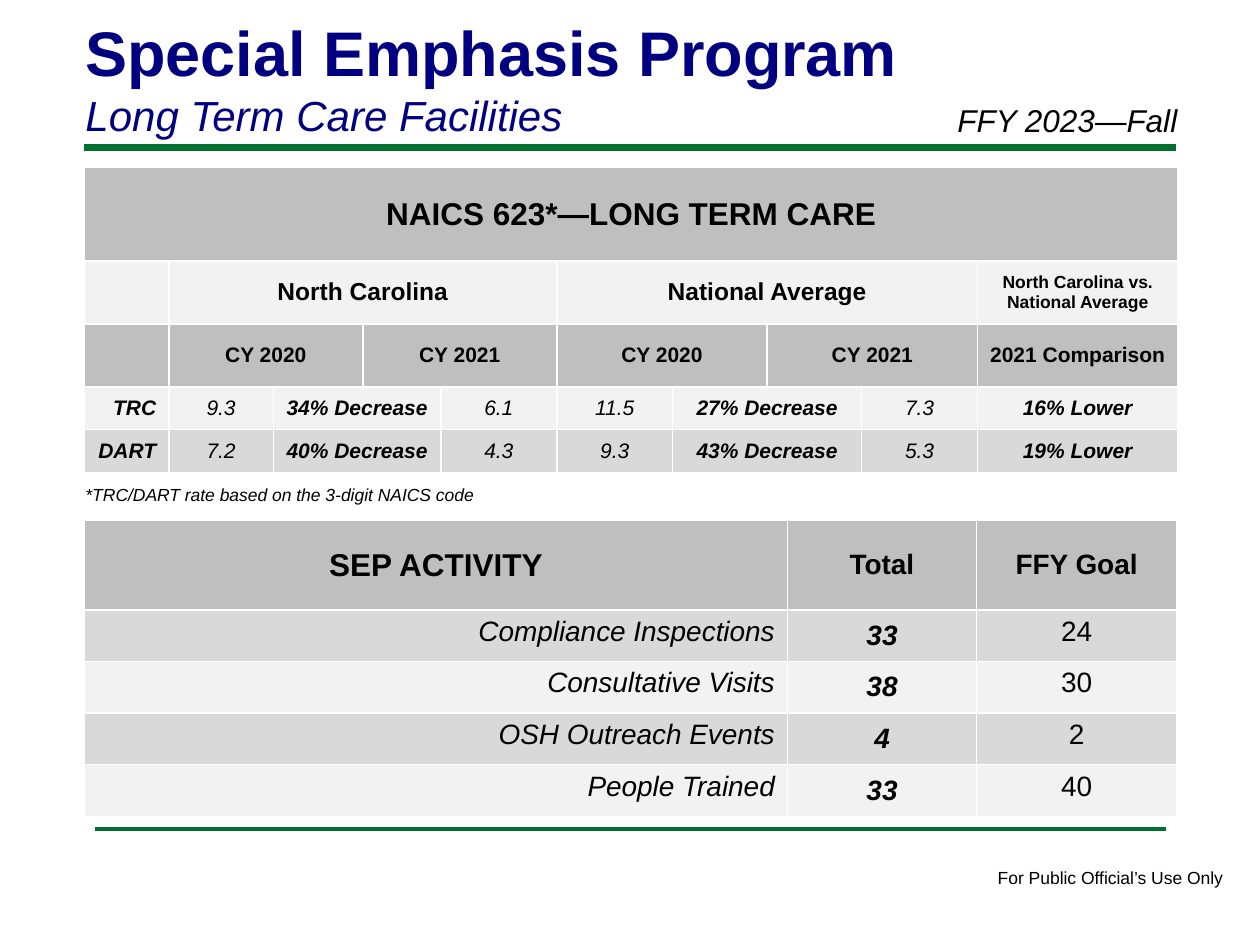
import pptx
import pptx.util
import pptx.dml.color
import pptx.enum.shapes
import pptx.enum.text
import pptx.oxml.ns
from lxml import etree

Inches = pptx.util.Inches
RGBColor = pptx.dml.color.RGBColor
ALIGN = pptx.enum.text.PP_ALIGN
ANCHOR = pptx.enum.text.MSO_ANCHOR

NAVY = RGBColor(0x00, 0x00, 0x80)
GREEN = RGBColor(0x00, 0x70, 0x30)
BLACK = RGBColor(0x00, 0x00, 0x00)
HEADER_GREY = RGBColor(0xBF, 0xBF, 0xBF)
MID_GREY = RGBColor(0xD9, 0xD9, 0xD9)
LIGHT_GREY = RGBColor(0xF2, 0xF2, 0xF2)


def add_run(para, text, size, bold=False, italic=False, color=BLACK):
    span = para.add_run()
    span.text = text
    span.font.name = "Arial"
    span.font.size = pptx.util.Pt(size)
    span.font.bold = bold
    span.font.italic = italic
    span.font.color.rgb = color


def add_table(slide, top, widths, heights, has_header):
    """Add an unbanded table at the left margin with the given grid."""
    frame = slide.shapes.add_table(
        len(heights), len(widths), Inches(0.67), Inches(top),
        Inches(sum(widths)), Inches(sum(heights)))
    table = frame.table
    table.first_row = has_header
    table.horz_banding = False
    for column, width in zip(table.columns, widths):
        column.width = Inches(width)
    for row, height in zip(table.rows, heights):
        row.height = Inches(height)
    return table


deck = pptx.Presentation()
deck.slide_width = Inches(10)
deck.slide_height = Inches(7.5)
page = deck.slides.add_slide(deck.slide_layouts[6])

# Rules under the title and above the footer
for left, right, y, weight in [(0.67, 9.33, 1.17, 4), (0.75, 9.25, 6.58, 2)]:
    rule = page.shapes.add_connector(
        pptx.enum.shapes.MSO_CONNECTOR.STRAIGHT,
        Inches(left), Inches(y), Inches(right), Inches(y))
    rule.line.color.rgb = GREEN
    rule.line.width = pptx.util.Pt(weight)
    etree.SubElement(rule._element.spPr, pptx.oxml.ns.qn("a:effectLst"))

# Text boxes: place, wrap, and one (text, size, bold, italic, colour) per line
text_boxes = [
    ((0.58, 0.06, 8.25, 1.11), True, [
        ("Special Emphasis Program", 36, True, False, NAVY),
        ("Long Term Care Facilities", 24, False, True, NAVY)]),
    ((7.5, 0.75, 2.5, 0.4), True, [("FFY 2023—Fall", 18, False, True, BLACK)]),
    ((0.58, 3.79, 3.38, 0.27), False, [
        ("*TRC/DART rate based on the 3-digit NAICS code", 10, False, True, BLACK)]),
    ((7.82, 6.83, 2.01, 0.27), False, [
        ("For Public Official’s Use Only", 10, False, False, BLACK)]),
]
for place, wrap, lines in text_boxes:
    box = page.shapes.add_textbox(*[Inches(length) for length in place])
    box.text_frame.word_wrap = wrap
    for number, line in enumerate(lines):
        para = box.text_frame.add_paragraph() if number else box.text_frame.paragraphs[0]
        add_run(para, *line)

# Injury rates: each row has a fill and (text, columns spanned, size) cells
rates = add_table(
    page, 1.33,
    [0.67, 0.83, 0.71, 0.62, 0.92, 0.92, 0.75, 0.75, 0.92, 1.59],
    [0.74, 0.5, 0.5, 0.34, 0.34], has_header=False)
rate_rows = [
    (HEADER_GREY, [("NAICS 623*—LONG TERM CARE", 10, 18)]),
    (LIGHT_GREY, [("", 1, 12), ("North Carolina", 4, 14), ("National Average", 4, 14),
                  ("North Carolina vs. National Average", 1, 10)]),
    (HEADER_GREY, [("", 1, 12), ("CY 2020", 2, 12), ("CY 2021", 2, 12),
                   ("CY 2020", 2, 12), ("CY 2021", 2, 12), ("2021 Comparison", 1, 12)]),
]
for fill, label, values in [
    (LIGHT_GREY, "TRC", ["9.3", "34% Decrease", "6.1", "11.5", "27% Decrease", "7.3", "16% Lower"]),
    (MID_GREY, "DART", ["7.2", "40% Decrease", "4.3", "9.3", "43% Decrease", "5.3", "19% Lower"]),
]:
    rate_rows.append((fill, [(label, 1, 12)] + [
        (value, 2 if "Decrease" in value else 1, 12) for value in values]))

for row, (fill, entries) in enumerate(rate_rows):
    is_data = row > 2
    column = 0
    for text, columns, size in entries:
        cell = rates.cell(row, column)
        if columns > 1:
            cell.merge(rates.cell(row, column + columns - 1))
        cell.fill.solid()
        cell.fill.fore_color.rgb = fill
        cell.vertical_anchor = ANCHOR.MIDDLE
        para = cell.text_frame.paragraphs[0]
        para.alignment = ALIGN.RIGHT if is_data and column == 0 else ALIGN.CENTER
        if text:
            is_rate = text.replace(".", "").isdigit()
            add_run(para, text, size, bold=not is_rate, italic=is_data)
        column += columns

# Program activity against goals
activity = add_table(page, 4.13, [5.58, 1.5, 1.59], [0.71] + [0.41] * 4, has_header=True)
activity_rows = [
    ("SEP ACTIVITY", "Total", "FFY Goal"),
    ("Compliance Inspections", "33", "24"),
    ("Consultative Visits", "38", "30"),
    ("OSH Outreach Events", "4", "2"),
    ("People Trained", "33", "40"),
]
for row, texts in enumerate(activity_rows):
    for column, text in enumerate(texts):
        is_header = row == 0
        is_total = column == 1
        cell = activity.cell(row, column)
        cell.fill.solid()
        cell.fill.fore_color.rgb = (
            HEADER_GREY if is_header else MID_GREY if row % 2 else LIGHT_GREY)
        cell.vertical_anchor = ANCHOR.MIDDLE if is_header or is_total else ANCHOR.TOP
        para = cell.text_frame.paragraphs[0]
        para.alignment = ALIGN.RIGHT if column == 0 and not is_header else ALIGN.CENTER
        add_run(para, text, 18 if is_header and column == 0 else 16,
                bold=is_header or is_total, italic=not is_header and column < 2)

deck.save("out.pptx")
